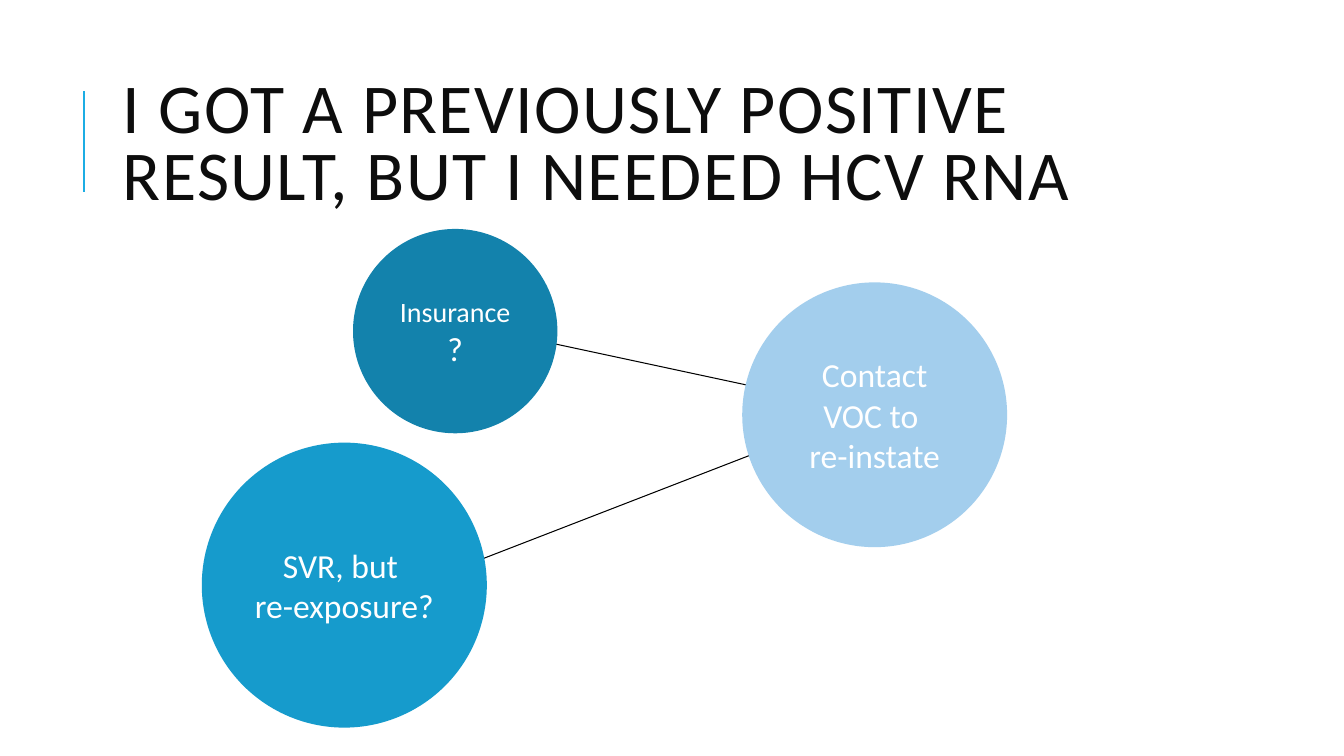
from dataclasses import dataclass

from lxml.etree import SubElement
from pptx import Presentation
from pptx.dml.color import RGBColor
from pptx.enum.shapes import MSO_CONNECTOR, MSO_SHAPE
from pptx.enum.text import MSO_ANCHOR, PP_ALIGN
from pptx.oxml.ns import qn
from pptx.util import Inches, Pt


@dataclass(frozen=True)
class Theme:
    font: str = "Calibri"
    ink: str = "0D0D0D"
    link: str = "000000"
    accent: str = "1CADE4"
    exposure: str = "169BCC"
    insurance: str = "1382AC"
    contact: str = "A3CEED"
    on_circle: str = "FFFFFF"
    title_size: int = 50
    body_size: int = 24
    small_size: int = 20


theme = Theme()


def style(font, size, color):
    font.name = theme.font
    font.size = Pt(size)
    font.color.rgb = RGBColor.from_string(color)


def draw_line(start, end, color, weight):
    line = slide.shapes.add_connector(
        MSO_CONNECTOR.STRAIGHT, *(Inches(v) for v in (*start, *end)))
    line.line.color.rgb = RGBColor.from_string(color)
    line.line.width = Pt(weight)
    SubElement(line._element.spPr, qn("a:effectLst"))


deck = Presentation()
deck.slide_width, deck.slide_height = Inches(13.33), Inches(7.5)
slide = deck.slides.add_slide(deck.slide_layouts[6])

# Title with its accent rule
draw_line((0.83, 1.9), (0.83, 0.9), theme.accent, 1.5)
title = slide.shapes.add_textbox(
    Inches(1.12), Inches(0.64), Inches(10.63), Inches(1.64)).text_frame
title.word_wrap = True
title.vertical_anchor = MSO_ANCHOR.MIDDLE
heading = title.paragraphs[0]
heading.line_spacing = 0.8
style(heading.font, theme.title_size, theme.ink)
heading_run = heading.add_run()
heading_run.text = "I GOT A PREVIOUSLY POSITIVE RESULT, BUT I NEEDED HCV RNA"
heading_run._r.get_or_add_rPr().set("spc", "100")

# Links run from each reason to the action, behind the circles
for start, end in (((7.74, 4.4), (4.59, 5.62)), ((4.33, 3.16), (7.64, 3.87))):
    draw_line(start, end, theme.link, 0.75)

# Circles: left, top, diameter, colour, paragraphs of (text, size) runs
circles = (
    (2.01, 4.4, 2.81, theme.exposure,
     ([("SVR, but ", theme.body_size)], [("re-exposure?", theme.body_size)])),
    (3.51, 2.28, 2.01, theme.insurance,
     ([("Insurance", theme.small_size), ("?", theme.body_size)],)),
    (7.37, 2.81, 2.61, theme.contact,
     ([("Contact VOC to ", theme.body_size)], [("re-instate", theme.body_size)])),
)
for left, top, diameter, color, paragraphs in circles:
    circle = slide.shapes.add_shape(
        MSO_SHAPE.OVAL, Inches(left), Inches(top), Inches(diameter), Inches(diameter))
    circle.shadow.inherit = False
    circle.fill.solid()
    circle.fill.fore_color.rgb = RGBColor.from_string(color)
    circle.line.color.rgb = RGBColor.from_string(color)
    circle.line.width = Pt(1.25)
    label = circle.text_frame
    label.word_wrap = True
    label.vertical_anchor = MSO_ANCHOR.MIDDLE
    for index, runs in enumerate(paragraphs):
        paragraph = label.add_paragraph() if index else label.paragraphs[0]
        paragraph.alignment = PP_ALIGN.CENTER
        style(paragraph.font, theme.body_size, theme.on_circle)
        for text, size in runs:
            run = paragraph.add_run()
            run.text = text
            if size != theme.body_size:
                run.font.size = Pt(size)

deck.save("out.pptx")
